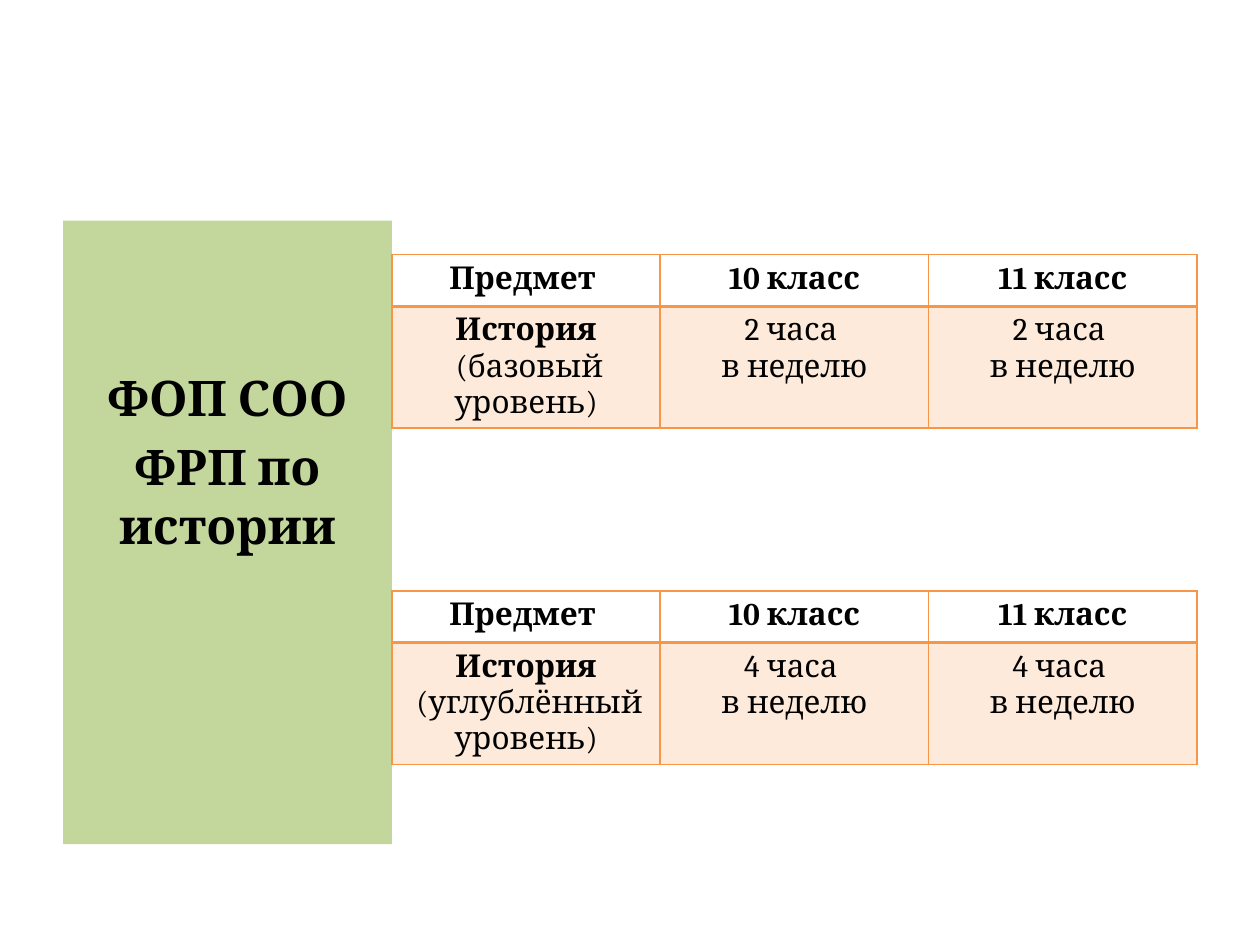
from lxml.etree import SubElement
from pptx import Presentation
from pptx.dml.color import RGBColor
from pptx.enum.text import MSO_ANCHOR, MSO_AUTO_SIZE, PP_ALIGN
from pptx.oxml.ns import qn
from pptx.util import Inches, Pt

GREEN = RGBColor(0xC3, 0xD6, 0x9B)
ORANGE = RGBColor(0xF7, 0x96, 0x46)
PEACH = RGBColor(0xFD, 0xEA, 0xDA)
BLACK = RGBColor(0, 0, 0)
GRID_COLUMNS, GRID_ROWS = 100, 75
HEADINGS = ["Предмет ", "10 класс", "11 класс"]
LEVELS = [("базовый", 2, 20.2), ("углублённый", 4, 46.9)]


class HoursSlide:
    """Draw the elements of the slide in one style on a grid of columns and rows."""

    font = "Cambria"

    def __init__(self, deck):
        self.deck = deck
        self.page = deck.slides.add_slide(deck.slide_layouts[2])
        title = self.page.shapes.title
        title.element.getparent().remove(title.element)

    def across(self, columns):
        return round(self.deck.slide_width * columns / GRID_COLUMNS)

    def down(self, rows):
        return round(self.deck.slide_height * rows / GRID_ROWS)

    def set_text(self, frame, lines, size, bold_lines):
        frame.text = "\n".join(lines)
        for number, para in enumerate(frame.paragraphs):
            para.alignment = PP_ALIGN.CENTER
            for span in para.runs:
                span.font.name = self.font
                span.font.size = Pt(size)
                span.font.bold = number < bold_lines
                span.font.color.rgb = BLACK

    def panel(self, left, top, width, height, lines):
        box = self.page.placeholders[1]
        box.left, box.top = self.across(left), self.down(top)
        box.width, box.height = self.across(width), self.down(height)
        box.fill.solid()
        box.fill.fore_color.rgb = GREEN
        frame = box.text_frame
        frame.word_wrap = True
        frame.auto_size = MSO_AUTO_SIZE.NONE
        frame.vertical_anchor = MSO_ANCHOR.TOP
        frame.margin_top = self.down(11.7)
        self.set_text(frame, lines, 28, len(lines))
        for number, para in enumerate(frame.paragraphs):
            para.space_before = Pt(5.6 if number else 0)

    def border(self, cell, **widths):
        properties = cell._tc.get_or_add_tcPr()
        for side in "LRTB":
            line = SubElement(properties, qn(f"a:ln{side}"), w=str(Pt(widths.get(side, 1))))
            fill = SubElement(line, qn("a:solidFill"))
            SubElement(fill, qn("a:srgbClr"), val=str(ORANGE))

    def table(self, left, top, width, row_heights, subject, hours):
        frame = self.page.shapes.add_table(
            2, len(HEADINGS), self.across(left), self.down(top),
            self.across(width), self.down(sum(row_heights)))
        table = frame.table
        table.first_row = table.horz_banding = False
        for row, height in zip(table.rows, row_heights):
            row.height = self.down(height)
        for index, heading in enumerate(HEADINGS):
            header, body = table.cell(0, index), table.cell(1, index)
            self.border(header, B=2)
            header.fill.background()
            self.set_text(header.text_frame, [heading], 18, 1)
            self.border(body, T=2)
            body.fill.solid()
            body.fill.fore_color.rgb = PEACH
            self.set_text(body.text_frame, hours if index else subject, 18, 0 if index else 1)


def main():
    deck = Presentation()
    deck.slide_width, deck.slide_height = Inches(10), Inches(7.5)
    slide = HoursSlide(deck)
    slide.panel(5, 17.5, 26.1, 49.5, ["ФОП СОО", "ФРП по истории"])
    for level, count, top in LEVELS:
        slide.table(31.1, top, 63.9, (4.1, 9.6),
                    ["История", f" ({level} уровень)"], [f"{count} часа ", "в неделю"])
    deck.save("out.pptx")


if __name__ == "__main__":
    main()
